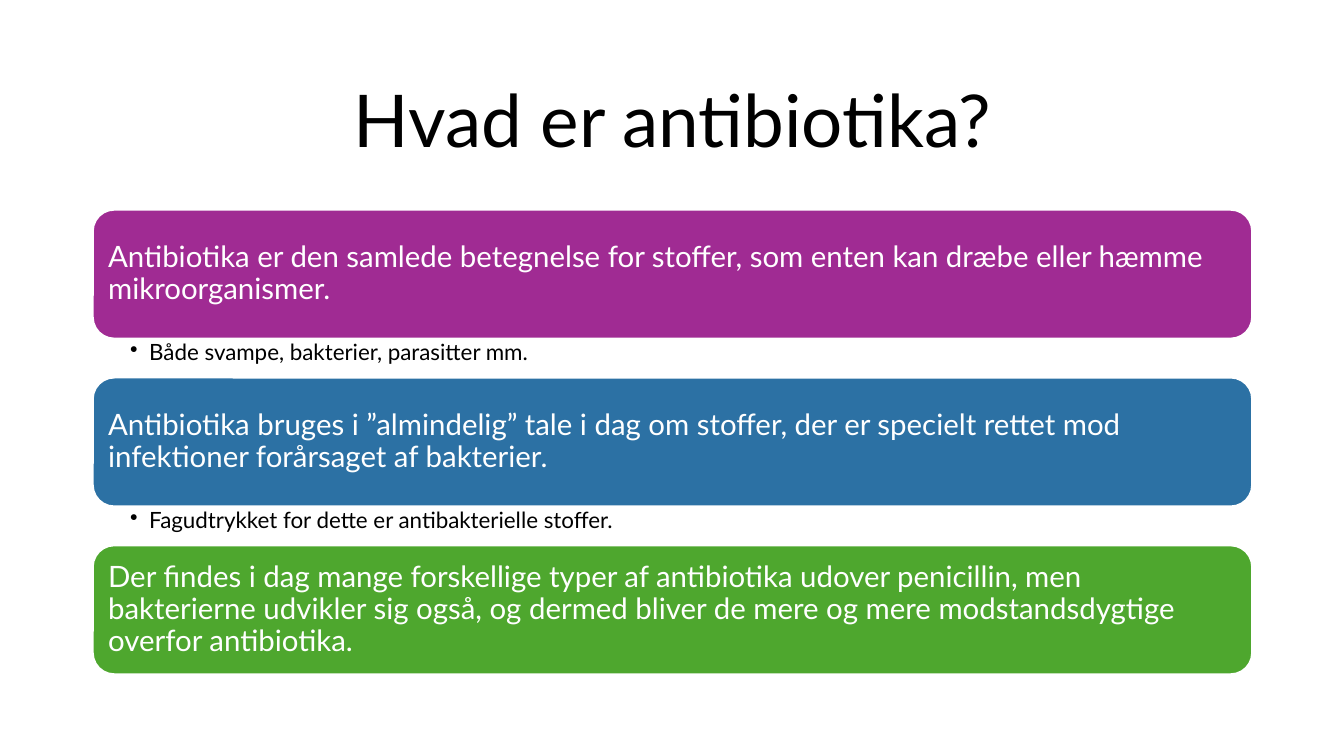
from lxml import etree
from pptx import Presentation
from pptx import util as u
from pptx.dml.color import RGBColor
from pptx.enum import shapes, text
from pptx.oxml.ns import qn

FONT = "Lato"
BLACK = RGBColor(0x00, 0x00, 0x00)
WHITE = RGBColor(0xFF, 0xFF, 0xFF)
PURPLE = RGBColor(0xA0, 0x2B, 0x93)
BLUE = RGBColor(0x2C, 0x71, 0xA4)
GREEN = RGBColor(0x4E, 0xA7, 0x2E)

# One column; each row holds a card and the gap for its note
LEFT, WIDTH = u.Inches(0.92), u.Inches(11.5)
FIRST_ROW, ROW_PITCH = u.Inches(2.08), u.Inches(1.665)
CARD_HEIGHT = u.Inches(1.28)
NOTE_HEIGHT = ROW_PITCH - CARD_HEIGHT

STATEMENTS = [
    (PURPLE,
     "Antibiotika er den samlede betegnelse for stoffer, som enten kan "
     "dræbe eller hæmme mikroorganismer.",
     "Både svampe, bakterier, parasitter mm."),
    (BLUE,
     "Antibiotika bruges i ”almindelig” tale i dag om stoffer, der er "
     "specielt rettet mod infektioner forårsaget af bakterier.",
     "Fagudtrykket for dette er antibakterielle stoffer."),
    (GREEN,
     "Der findes i dag mange forskellige typer af antibiotika udover "
     "penicillin, men bakterierne udvikler sig også, og dermed bliver de "
     "mere og mere modstandsdygtige overfor antibiotika.",
     None),
]


def write(shape, wording, size, color, margins, anchor, align=text.PP_ALIGN.LEFT):
    """Fill a shape with one formatted paragraph and return the paragraph."""
    frame = shape.text_frame
    frame.word_wrap = True
    frame.vertical_anchor = anchor
    (frame.margin_left, frame.margin_top,
     frame.margin_right, frame.margin_bottom) = map(u.Inches, margins)
    frame.text = wording
    paragraph = frame.paragraphs[0]
    paragraph.alignment = align
    paragraph.line_spacing = 0.9
    font = paragraph.runs[0].font
    font.name, font.size, font.color.rgb = FONT, u.Pt(size), color
    return paragraph


def add_title(slide, wording):
    box = slide.shapes.add_textbox(LEFT, u.Inches(0.61), WIDTH, u.Inches(1.24))
    write(box, wording, 52, BLACK, (0.1, 0.05, 0.1, 0.05),
          text.MSO_ANCHOR.MIDDLE, text.PP_ALIGN.CENTER)


def add_card(slide, top, wording, color):
    card = slide.shapes.add_shape(
        shapes.MSO_SHAPE.ROUNDED_RECTANGLE, LEFT, top, WIDTH, CARD_HEIGHT)
    card.shadow.inherit = False
    card.fill.solid()
    card.fill.fore_color.rgb = color
    card.line.color.rgb = WHITE
    card.line.width = u.Pt(1.5)
    write(card, wording, 21, WHITE, (0.09,) * 4, text.MSO_ANCHOR.MIDDLE)


def add_note(slide, top, wording):
    box = slide.shapes.add_textbox(LEFT, top, WIDTH, NOTE_HEIGHT)
    paragraph = write(box, wording, 16, BLACK, (0.37, 0.03, 0.16, 0.03),
                      text.MSO_ANCHOR.TOP)
    # Hanging bullet
    properties = paragraph._p.get_or_add_pPr()
    indent = u.Inches(0.19)
    properties.set("marL", str(indent))
    properties.set("indent", str(-indent))
    etree.SubElement(properties, qn("a:buChar")).set("char", "•")


def main():
    presentation = Presentation()
    presentation.slide_width = u.Inches(13.33)
    presentation.slide_height = u.Inches(7.5)
    slide = presentation.slides.add_slide(presentation.slide_layouts[6])

    add_title(slide, "Hvad er antibiotika?")

    # Coloured statements with their notes below
    for row, (color, statement, note) in enumerate(STATEMENTS):
        top = FIRST_ROW + row * ROW_PITCH
        add_card(slide, top, statement, color)
        if note:
            add_note(slide, top + CARD_HEIGHT, note)

    presentation.save("out.pptx")


if __name__ == "__main__":
    main()
